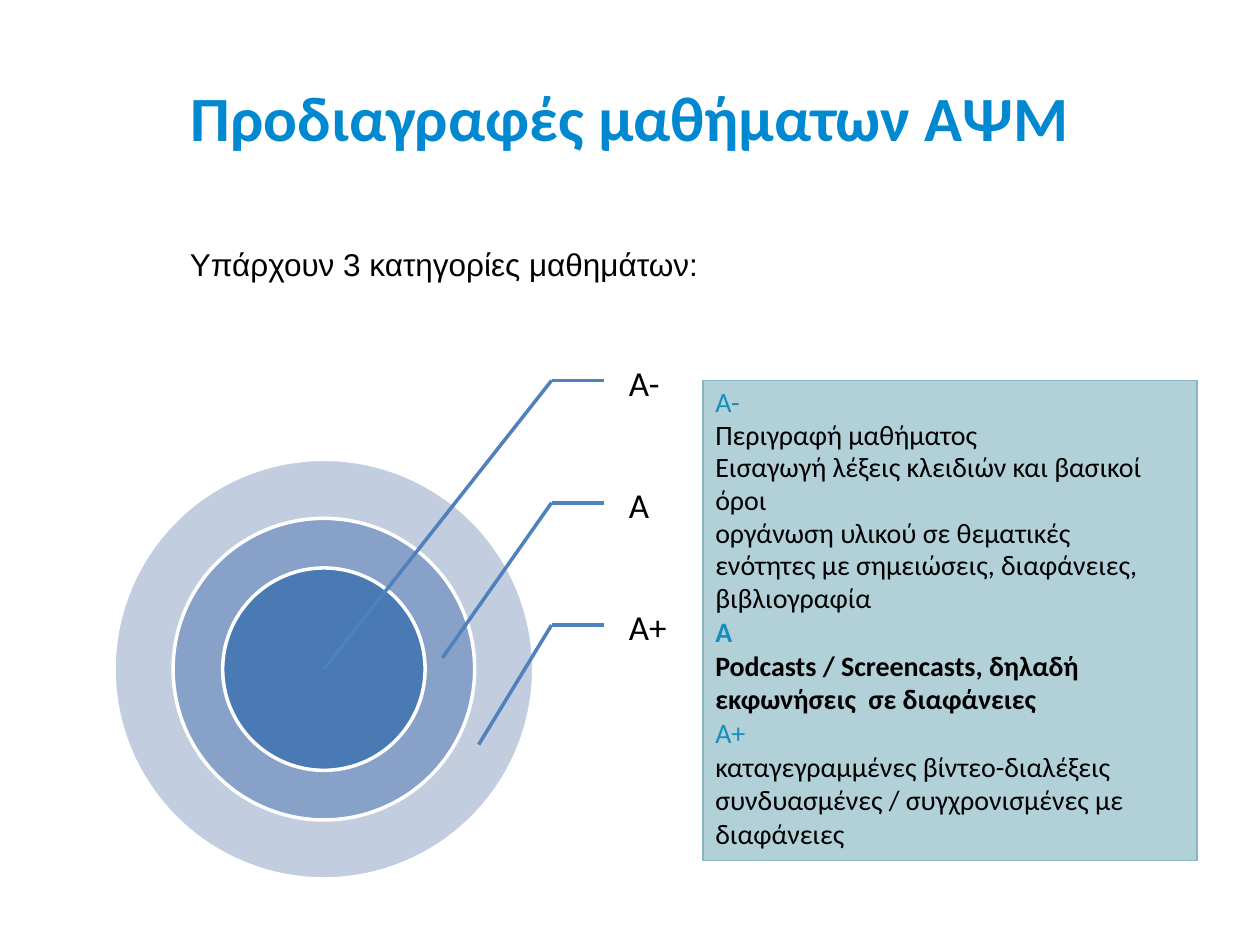
"""Build the slide on the three categories of course specifications."""
from lxml.etree import SubElement
from pptx import Presentation
from pptx.dml.color import RGBColor
from pptx.enum.shapes import MSO_CONNECTOR, MSO_SHAPE
from pptx.enum.text import MSO_ANCHOR, PP_ALIGN
from pptx.oxml.ns import qn
from pptx.util import Cm, Pt

BLUE = RGBColor(0x00, 0x89, 0xD0)
TEAL = RGBColor(0x17, 0x8D, 0xBB)
BLACK = RGBColor(0x00, 0x00, 0x00)
WHITE = RGBColor(0xFF, 0xFF, 0xFF)
LEADER = RGBColor(0x4F, 0x81, 0xBC)
PANEL_FILL = RGBColor(0xB2, 0xD0, 0xD8)
PANEL_LINE = RGBColor(0x86, 0xB6, 0xC2)
RING_PALE = RGBColor(0xC2, 0xCD, 0xE0)
RING_MIDDLE = RGBColor(0x87, 0xA1, 0xC8)
RING_DARK = RGBColor(0x4A, 0x7A, 0xB4)

CENTRE = (6.53, 13.49)
RINGS = [(8.46, RING_PALE), (6.08, RING_MIDDLE), (4.08, RING_DARK)]
LEADERS = [("Α-", CENTRE), ("Α", (8.92, 13.26)), ("Α+", (9.65, 15.01))]
LEADER_TOP, LEADER_STEP = 7.67, 2.465
ELBOW, LEADER_END = 11.12, 12.18

DETAILS = [
    ("Α-", {"color": TEAL, "spacing": 0.97}),
    ("Περιγραφή μαθήματος", {"spacing": 0.97}),
    ("Εισαγωγή λέξεις κλειδιών και βασικοί όροι", {"spacing": 0.97}),
    ("οργάνωση υλικού σε θεματικές ενότητες με σημειώσεις, διαφάνειες, βιβλιογραφία",
     {"spacing": 0.97}),
    ("Α", {"color": TEAL, "bold": True}),
    ("Podcasts / Screencasts, δηλαδή εκφωνήσεις  σε διαφάνειες", {"bold": True}),
    ("Α+", {"color": TEAL}),
    ("καταγεγραμμένες βίντεο-διαλέξεις συνδυασμένες / συγχρονισμένες με διαφάνειες", {}),
]


def write(para, text, size=16, color=BLACK, bold=False, font="Calibri",
          align=PP_ALIGN.LEFT, spacing=None):
    """Add text to a paragraph in the given format."""
    para.alignment = align
    para.line_spacing = spacing
    span = para.add_run()
    span.text = text
    span.font.name = font
    span.font.size = Pt(size)
    span.font.bold = bold
    span.font.color.rgb = color


class SlideBuilder:
    """Hold the line style and the slide being drawn."""

    def __init__(self, page, line_width=2):
        self.page = page
        self.line_width = line_width

    def title(self, text, left, top, width, height):
        """Place and fill the title placeholder."""
        box = self.page.shapes.title
        box.left, box.top, box.width, box.height = map(Cm, (left, top, width, height))
        box.text_frame.vertical_anchor = MSO_ANCHOR.MIDDLE
        write(box.text_frame.paragraphs[0], text, size=36, color=BLUE, bold=True,
              align=PP_ALIGN.CENTER)

    def text(self, text, left, top, width, height, anchor=MSO_ANCHOR.TOP, **style):
        """Add a wrapped text box."""
        box = self.page.shapes.add_textbox(*map(Cm, (left, top, width, height)))
        box.text_frame.word_wrap = True
        box.text_frame.vertical_anchor = anchor
        write(box.text_frame.paragraphs[0], text, **style)

    def shape(self, kind, left, top, width, height, fill, line, line_width=None):
        """Add a flat preset shape."""
        shape = self.page.shapes.add_shape(kind, *map(Cm, (left, top, width, height)))
        shape.shadow.inherit = False
        shape.fill.solid()
        shape.fill.fore_color.rgb = fill
        shape.line.color.rgb = line
        shape.line.width = Pt(line_width or self.line_width)
        return shape

    def ring(self, diameter, fill):
        """Add a disc around the common centre."""
        left, top = (middle - diameter / 2 for middle in CENTRE)
        self.shape(MSO_SHAPE.OVAL, left, top, diameter, diameter, fill, WHITE)

    def line(self, start, end):
        """Add a straight line without a shadow."""
        line = self.page.shapes.add_connector(
            MSO_CONNECTOR.STRAIGHT, *map(Cm, (*start, *end)))
        line.line.color.rgb = LEADER
        line.line.width = Pt(self.line_width)
        SubElement(line._element.spPr, qn("a:effectLst"))

    def leader(self, label, top, target):
        """Add a bent leader line and its label."""
        self.line((ELBOW, top), (LEADER_END, top))
        self.line((ELBOW, top), target)
        self.text(label, 12.43, top - 0.51, 5.18, 1.12, size=20)

    def panel(self, entries, left, top, width, height):
        """Add the filled panel with its paragraphs."""
        panel = self.shape(MSO_SHAPE.RECTANGLE, left, top, width, height,
                           PANEL_FILL, PANEL_LINE, 0.75)
        frame = panel.text_frame
        frame.word_wrap = True
        frame.vertical_anchor = MSO_ANCHOR.TOP
        frame.margin_right = Cm(1.02)
        for index, (text, style) in enumerate(entries):
            para = frame.add_paragraph() if index else frame.paragraphs[0]
            write(para, text, **style)


def main():
    """Build and save the deck."""
    deck = Presentation()
    deck.slide_width, deck.slide_height = Cm(25.4), Cm(19.05)
    builder = SlideBuilder(deck.slides.add_slide(deck.slide_layouts[5]))
    builder.title("Προδιαγραφές μαθήματων ΑΨΜ", 1.27, 0.76, 22.86, 3.18)
    for diameter, fill in RINGS:
        builder.ring(diameter, fill)
    builder.panel(DETAILS, 14.17, 7.67, 9.96, 9.68)
    for index, (label, target) in enumerate(LEADERS):
        builder.leader(label, LEADER_TOP + index * LEADER_STEP, target)
    builder.text("Υπάρχουν 3 κατηγορίες μαθημάτων:", 3.58, 4.52, 20.04, 1.6,
                 anchor=MSO_ANCHOR.MIDDLE, size=18, font="Arial")
    deck.save("out.pptx")


if __name__ == "__main__":
    main()
